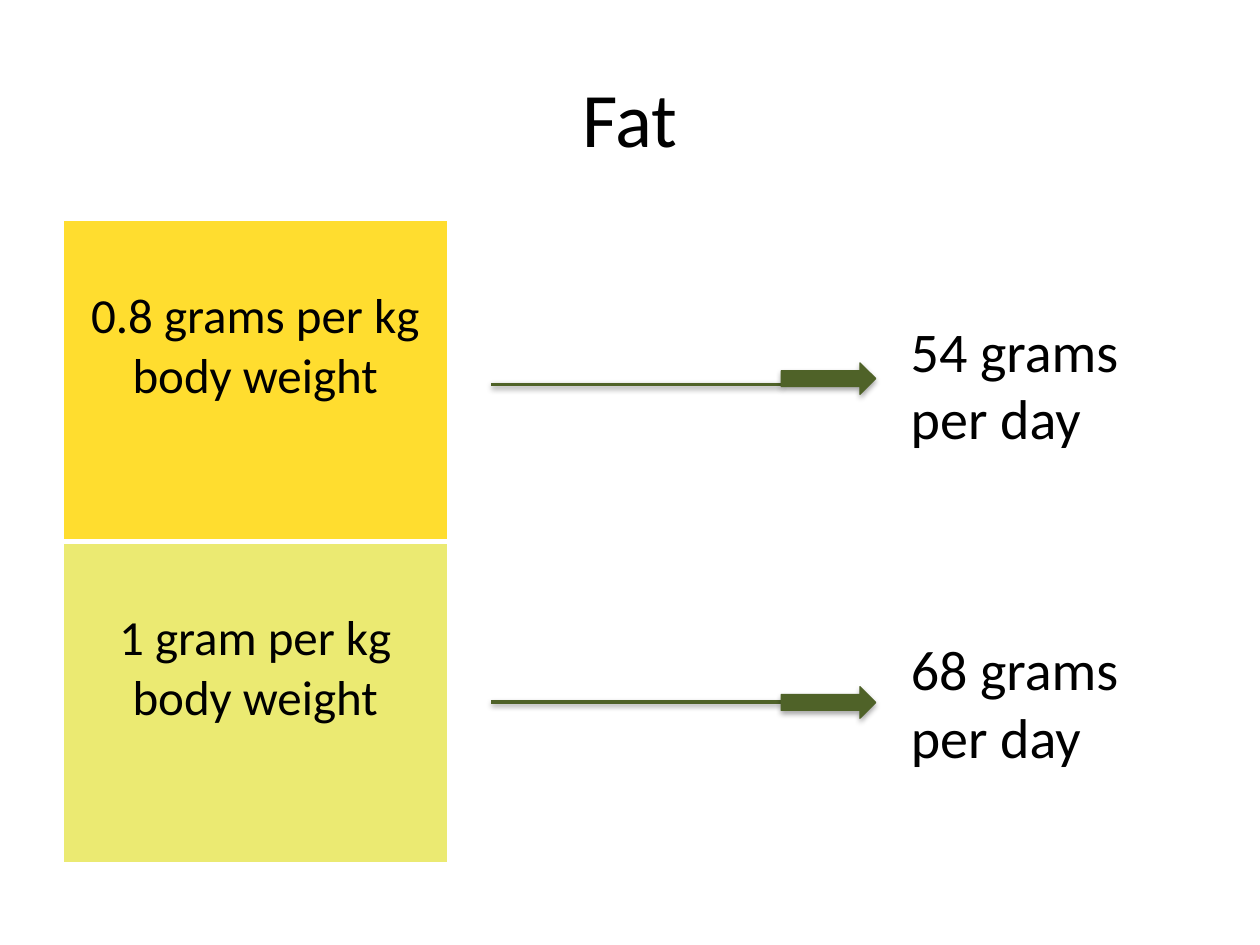
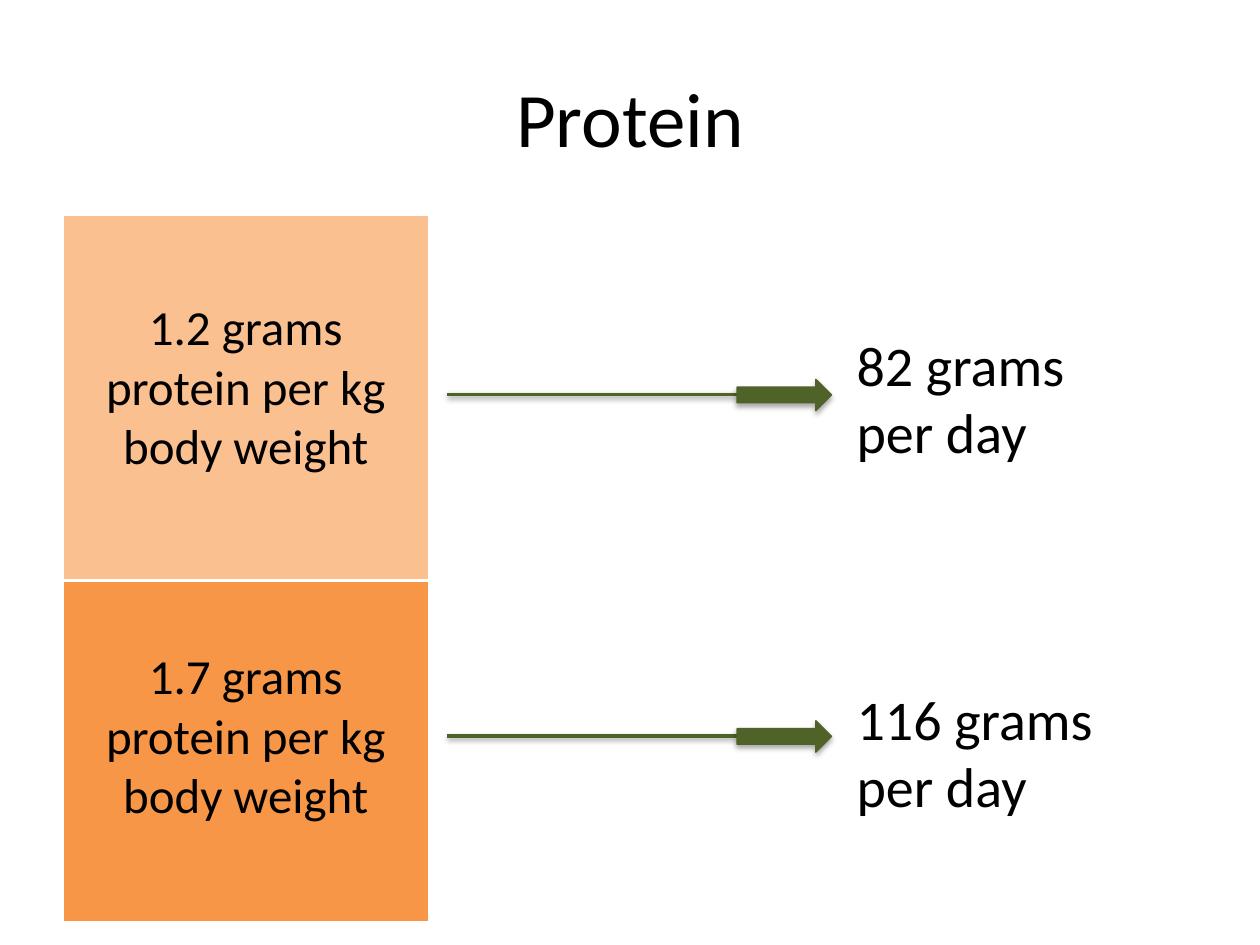
from lxml.etree import SubElement
from pptx import Presentation
from pptx.dml.color import RGBColor
from pptx.enum.shapes import MSO_CONNECTOR as Connector, MSO_SHAPE as Preset
from pptx.enum.text import MSO_ANCHOR as Anchor, MSO_AUTO_SIZE as AutoSize, PP_ALIGN as Align
from pptx.oxml import parse_xml
from pptx.oxml.ns import nsdecls, qn
from pptx.util import Emu, Pt

EMU_PER_PX = 9144  # 100 px to the inch

# Each table is a (top, rows) pair; every row leads by an arrow to a daily amount.
SLIDES = [
    {
        "title": "Fat",
        "table_width": 305,
        "line_left": 390,
        "amount_left": 713,
        "tables": [
            (175, [
                {"rate": "0.8 grams per kg body weight", "fill": "FFDD2F", "height": 255,
                 "inset": 53, "bottom_border": 3, "line_y": 305, "arrow_top": 288,
                 "amount": "54 grams", "amount_top": 246, "amount_width": 287},
                {"rate": "1 gram per kg body weight", "fill": "EBEA72", "height": 255,
                 "inset": 53, "bottom_border": 1, "line_y": 557, "arrow_top": 545,
                 "amount": "68 grams", "amount_top": 499, "amount_width": 261},
            ]),
        ],
    },
    {
        "title": "Protein",
        "table_width": 290,
        "line_left": 355,
        "amount_left": 670,
        "tables": [
            (171, [
                {"rate": "1.2 grams protein per kg body weight", "fill": "FAC090", "height": 290,
                 "inset": 66, "bottom_border": 3, "line_y": 313, "arrow_top": 301,
                 "amount": "82 grams", "amount_top": 257, "amount_width": 317},
            ]),
            (461, [
                {"rate": "1.7 grams protein per kg body weight", "fill": "F79646", "height": 272,
                 "inset": 53, "bottom_border": 3, "line_y": 584, "arrow_top": 572,
                 "amount": "116 grams", "amount_top": 538, "amount_width": 306},
            ]),
        ],
    },
]
PERIOD = "per day"

THEME = {
    "font": "Calibri",
    "text": "000000",
    "border": "FFFFFF",
    "arrow": "4F6228",
    "title_size": 44,
    "rate_size": 28,
    "amount_size": 32,
}
SLIDE_SIZE = (1000, 750)
TITLE_BOX = (50, 30, 900, 125)
TABLE_LEFT = 50
LINE_LENGTH = 230
ARROW_SIZE = (75, 25)
AMOUNT_HEIGHT = 118


def px(*lengths):
    return [Emu(length * EMU_PER_PX) for length in lengths]


def color(name):
    return RGBColor.from_string(THEME[name])


def set_all(target, values):
    for name, value in values.items():
        setattr(target, name, value)


def write(frame, lines, size, align):
    frame.text = "\n".join(lines)
    for paragraph in frame.paragraphs:
        paragraph.alignment = align
        font = paragraph.runs[0].font
        set_all(font, {"name": THEME["font"], "size": Pt(size)})
        font.color.rgb = color("text")


def add_shadow(shape, distance, opacity):
    """Cast a soft black shadow straight down; distance in EMU, opacity in percent."""
    shape.element.spPr.append(parse_xml(
        f'<a:effectLst {nsdecls("a")}><a:outerShdw blurRad="40000" dist="{distance}" '
        f'dir="5400000" rotWithShape="0"><a:srgbClr val="000000">'
        f'<a:alpha val="{opacity * 1000}"/></a:srgbClr></a:outerShdw></a:effectLst>'))


def set_borders(cell, bottom):
    properties = cell._tc.get_or_add_tcPr()
    widths = {"lnL": 1, "lnR": 1, "lnT": 1, "lnB": bottom}
    for index, (side, points) in enumerate(widths.items()):
        line = SubElement(properties, qn(f"a:{side}"), w=str(Pt(points)))
        fill = SubElement(line, qn("a:solidFill"))
        SubElement(fill, qn("a:srgbClr"), val=THEME["border"])
        properties.insert(index, line)


def add_rates(slide, top, width, rows):
    height = sum(row["height"] for row in rows)
    table = slide.shapes.add_table(len(rows), 1, *px(TABLE_LEFT, top, width, height)).table
    set_all(table, {"first_row": False, "horz_banding": False})
    for index, row in enumerate(rows):
        table.rows[index].height = px(row["height"])[0]
        cell = table.cell(index, 0)
        cell.margin_top = px(row["inset"])[0]
        write(cell.text_frame, [row["rate"]], THEME["rate_size"], Align.CENTER)
        cell.fill.solid()
        cell.fill.fore_color.rgb = RGBColor.from_string(row["fill"])
        set_borders(cell, row["bottom_border"])


def add_arrow(slide, left, line_y, arrow_top):
    """Draw a thin line that ends in a block arrow."""
    right = left + LINE_LENGTH
    line = slide.shapes.add_connector(Connector.STRAIGHT, *px(left, line_y, right, line_y))
    arrow = slide.shapes.add_shape(Preset.RIGHT_ARROW, *px(right, arrow_top, *ARROW_SIZE))
    arrow.fill.solid()
    arrow.fill.fore_color.rgb = color("arrow")
    for shape, width, distance, opacity in ((line, 2, 20000, 38), (arrow, 0.75, 23000, 35)):
        shape.line.color.rgb = color("arrow")
        shape.line.width = Pt(width)
        add_shadow(shape, distance, opacity)


def add_amount(slide, left, row):
    box = slide.shapes.add_textbox(
        *px(left, row["amount_top"], row["amount_width"], AMOUNT_HEIGHT))
    set_all(box.text_frame, {"word_wrap": True, "auto_size": AutoSize.SHAPE_TO_FIT_TEXT})
    write(box.text_frame, [row["amount"], PERIOD], THEME["amount_size"], Align.LEFT)


def add_nutrient_slide(presentation, content):
    slide = presentation.slides.add_slide(presentation.slide_layouts.get_by_name("Title Only"))
    title = slide.shapes.title
    set_all(title, dict(zip(("left", "top", "width", "height"), px(*TITLE_BOX))))
    title.text_frame.vertical_anchor = Anchor.MIDDLE
    write(title.text_frame, [content["title"]], THEME["title_size"], Align.CENTER)
    for top, rows in content["tables"]:
        add_rates(slide, top, content["table_width"], rows)
        for row in rows:
            add_arrow(slide, content["line_left"], row["line_y"], row["arrow_top"])
            add_amount(slide, content["amount_left"], row)


def main():
    presentation = Presentation()
    presentation.slide_width, presentation.slide_height = px(*SLIDE_SIZE)
    for content in SLIDES:
        add_nutrient_slide(presentation, content)
    presentation.save("out.pptx")


if __name__ == "__main__":
    main()
